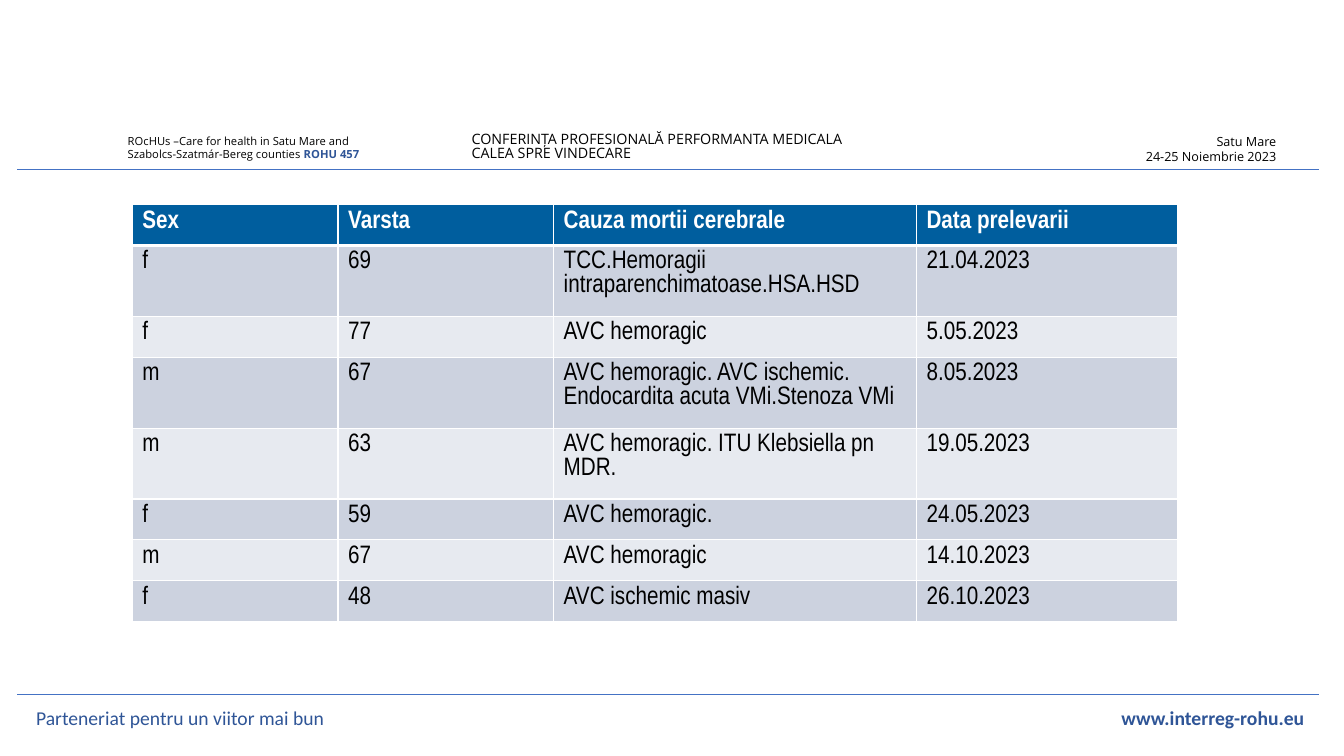
"""Builds a conference slide with a table of organ donors."""
from lxml import etree
from pptx import Presentation
from pptx.dml.color import RGBColor as RGB
from pptx.enum.shapes import MSO_CONNECTOR as CONN
from pptx.enum.text import MSO_ANCHOR as ANCHOR, PP_ALIGN as ALIGN
from pptx.oxml.ns import qn
from pptx.util import Pt

COLORS = {"text": "000000", "blue": "2F5597", "rule": "4472C4", "header": "005E9E",
          "odd": "CCD2DF", "even": "E7EAF0", "white": "FFFFFF"}
HEADINGS = ("Sex", "Varsta", "Cauza mortii cerebrale", "Data prelevarii")
DONORS = (
    ("f", "69", "TCC.Hemoragii intraparenchimatoase.HSA.HSD", "21.04.2023"),
    ("f", "77", "AVC hemoragic", "5.05.2023"),
    ("m", "67", "AVC hemoragic. AVC ischemic. Endocardita acuta VMi.Stenoza VMi", "8.05.2023"),
    ("m", "63", "AVC hemoragic. ITU Klebsiella pn MDR.", "19.05.2023"),
    ("f", "59", "AVC hemoragic.", "24.05.2023"),
    ("m", "67", "AVC hemoragic", "14.10.2023"),
    ("f", "48", "AVC ischemic masiv", "26.10.2023"),
)
COL_WIDTHS = (147, 154, 259.2, 186.8)
ROW, TALL_ROW, WRAP_AT = 29.2, 50.6, 25


def add_run(p, text, font="Open Sans", size=18, color="text", bold=False):
    r = p.add_run()
    r.text = text
    r.font.name, r.font.size, r.font.bold = font, Pt(size), bold
    r.font.color.rgb = RGB.from_string(COLORS[color])


class Slide:
    def __init__(self, prs):
        self.shapes = prs.slides.add_slide(prs.slide_layouts[6]).shapes

    def text(self, box, lines, align=ALIGN.LEFT, anchor=ANCHOR.TOP, spacing=None,
             tab=None, **style):
        tf = self.shapes.add_textbox(*map(Pt, box)).text_frame
        tf.word_wrap, tf.vertical_anchor = True, anchor
        for i, runs in enumerate(lines):
            p = tf.add_paragraph() if i else tf.paragraphs[0]
            p.alignment, p.line_spacing = align, spacing
            if tab:
                tabs = etree.SubElement(p._p.get_or_add_pPr(), qn("a:tabLst"))
                etree.SubElement(tabs, qn("a:tab"), pos=str(Pt(tab)), algn="r")
            for text, extra in runs:
                add_run(p, text, **{**style, **extra})

    def rule(self, x1, x2, y):
        line = self.shapes.add_connector(CONN.STRAIGHT, Pt(x1), Pt(y), Pt(x2), Pt(y))
        line.line.color.rgb = RGB.from_string(COLORS["rule"])
        line.line.width = Pt(0.5)
        etree.SubElement(line._element.spPr, qn("a:effectLst"))

    def table(self, x, y, widths, rows):
        heights = [TALL_ROW if len(row[2]) > WRAP_AT else ROW for row in rows]
        table = self.shapes.add_table(len(rows), len(widths), Pt(x), Pt(y),
                                      Pt(sum(widths)), Pt(sum(heights))).table
        for col, width in zip(table.columns, widths):
            col.width = Pt(width)
        for i, (row, height) in enumerate(zip(rows, heights)):
            table.rows[i].height = Pt(height)
            fill = "odd" if i % 2 else "even" if i else "header"
            for j, text in enumerate(row):
                self.cell(table.cell(i, j), text, fill, i)

    def cell(self, cell, text, fill, row):
        add_run(cell.text_frame.paragraphs[0], text, "Arial Narrow",
                color="text" if row else "white", bold=not row)
        tc_pr = cell._tc.get_or_add_tcPr()
        for side in "LRTB":
            thick = (side, row) in (("B", 0), ("T", 1))
            ln = etree.SubElement(tc_pr, qn(f"a:ln{side}"), w=str(Pt(3 if thick else 1)))
            solid = etree.SubElement(ln, qn("a:solidFill"))
            etree.SubElement(solid, qn("a:srgbClr"), val=COLORS["white"])
        cell.fill.solid()
        cell.fill.fore_color.rgb = RGB.from_string(COLORS[fill])


def main():
    prs = Presentation()
    prs.slide_width, prs.slide_height = Pt(960), Pt(540)
    s = Slide(prs)
    s.text((329.8, 92.2, 410.4, 28.8),
           [[("CONFERINȚA PROFESIONALĂ PERFORMANTA MEDICALA", {})],
            [("CALEA SPRE VINDECARE", {})]], spacing=0.8, size=10.2)
    s.text((758.9, 92.2, 159.8, 28.8),
           [[("Satu Mare", {})], [("24-25 Noiembrie 2023", {})]], align=ALIGN.RIGHT, size=9)
    s.text((84.2, 92.2, 244.8, 26.6),
           [[("ROcHUs –Care for health in Satu Mare and", {})],
            [("Szabolcs-Szatmár-Bereg counties ", {}),
             ("ROHU 457", {"color": "blue", "bold": True})]], size=8)
    for y in (121, 496):
        s.rule(12.2, 942.5, y)
    s.text((18.7, 498.2, 929.5, 28.8),
           [[("Parteneriat pentru un viitor mai bun\t", {}),
             ("www.interreg-rohu.eu", {"bold": True})]],
           anchor=ANCHOR.MIDDLE, tab=906, font="Calibri", size=14, color="blue")
    s.table(94.5, 146.2, COL_WIDTHS, (HEADINGS, *DONORS))
    prs.save("out.pptx")


if __name__ == "__main__":
    main()
